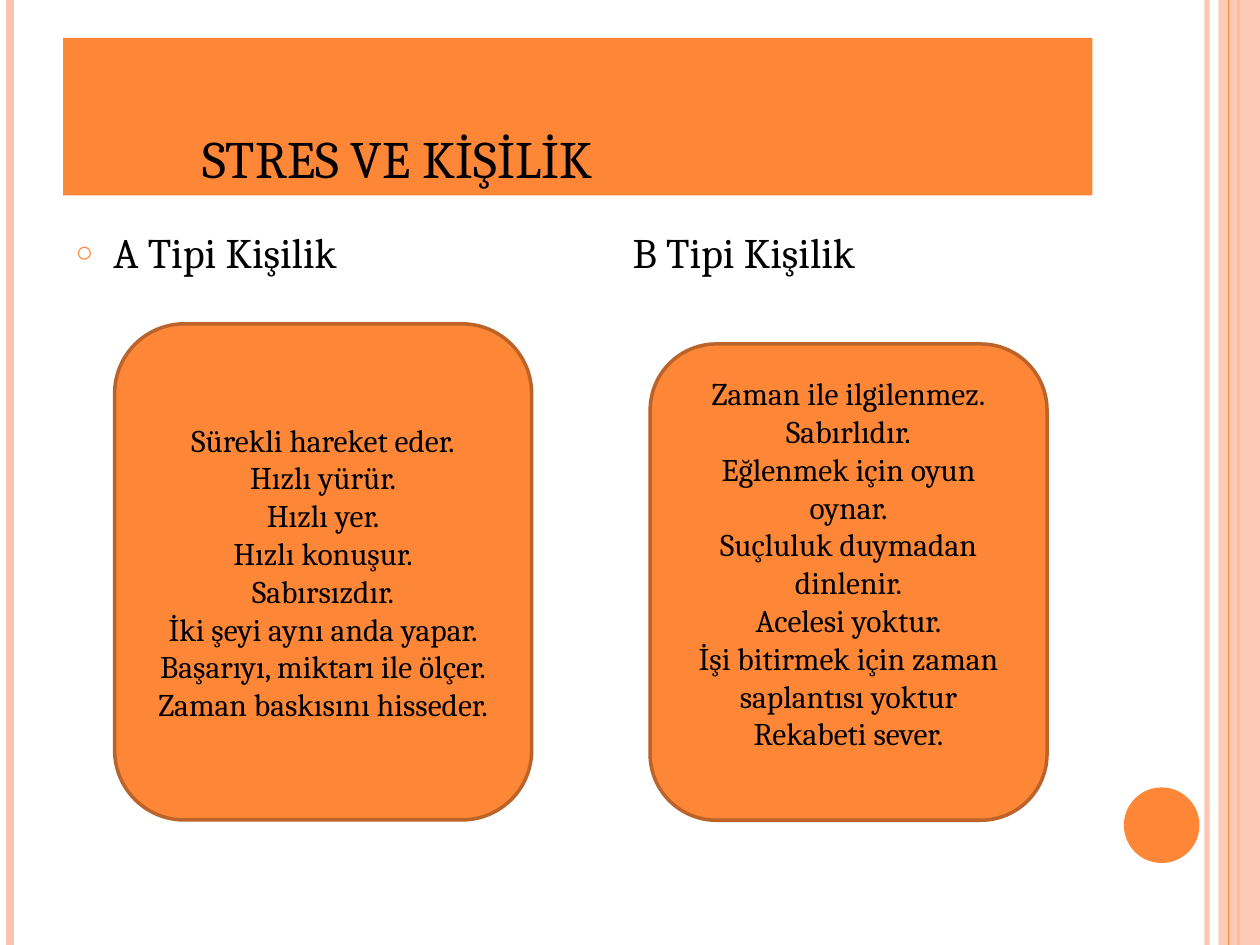
"""Build the slide on stress and personality types."""
from lxml.etree import SubElement
from pptx import Presentation
from pptx.dml.color import RGBColor
from pptx.enum.shapes import MSO_CONNECTOR as LINK, MSO_SHAPE as FORM
from pptx.enum.text import MSO_ANCHOR as ANCHOR, MSO_AUTO_SIZE as FIT, PP_ALIGN as ALIGN
from pptx.oxml.ns import qn
from pptx.util import Inches, Pt

ORANGE, PEACH, BROWN, BLACK = "FE8637", "FEC3AE", "BC6329", "000000"

deck = Presentation()
deck.slide_width, deck.slide_height = Inches(10), Inches(7.5)
slide = deck.slides.add_slide(deck.slide_layouts[3])
shapes = slide.shapes


def area(*shares):
    """Turn percent shares of the slide (left, top, width, height) into lengths."""
    sides = (deck.slide_width, deck.slide_height) * 2
    return [int(side * share / 100) for side, share in zip(sides, shares)]


def paint(fill, tone):
    """Give a fill one solid colour."""
    fill.solid()
    fill.fore_color.rgb = RGBColor.from_string(tone)


rails = [
    (95.8, 0, 3, PEACH, 93),
    (0.8, 0, 4.5, PEACH, 100),
    (98.3, 0, 1.5, ORANGE, 100),
    (96.7, 3.3, 0, PEACH, 87),
    (97.5, 0, 0.75, ORANGE, 100),
]
for left, wide, weight, tone, alpha in rails:
    x, y, w, h = area(left, 0, wide, 100)
    if wide:
        rail = shapes.add_shape(FORM.RECTANGLE, x, y, w, h)
        paint(rail.fill, tone)
        rail.line.fill.background()
        rail.shadow.inherit = False
    else:
        rail = shapes.add_connector(LINK.STRAIGHT, x, y, x, h)
        paint(rail.line.fill, tone)
        rail.line.width = Pt(weight)
        SubElement(rail._element.spPr, qn("a:effectLst"))
    if alpha < 100:
        shade = rail._element.spPr.find(".//" + qn("a:srgbClr"))
        SubElement(shade, qn("a:alpha"), val=str(alpha * 1000))

dot = shapes.add_shape(FORM.OVAL, *area(89.2, 83.33, 6, 8))
paint(dot.fill, ORANGE)
dot.line.fill.background()
dot.shadow.inherit = False

title, first, second = slide.placeholders
paint(title.fill, ORANGE)
heads = [
    (title, "STRES VE KİŞİLİK", 30, 1.11, ANCHOR.BOTTOM, (5, 4, 81.7, 16.67)),
    (first, "A Tipi Kişilik", 24, 0.1, ANCHOR.TOP, (5, 23.33, 40.9, 71)),
    (second, "B Tipi Kişilik", 24, 0.1, ANCHOR.TOP, (49.2, 23.33, 37.5, 71)),
]
for holder, words, size, inset, anchor, place in heads:
    holder.left, holder.top, holder.width, holder.height = area(*place)
    frame = holder.text_frame
    frame.text = words
    frame.auto_size = FIT.NONE
    frame.vertical_anchor = anchor
    frame.margin_left = Inches(inset)
    para = frame.paragraphs[0]
    para.alignment = ALIGN.LEFT
    para.font.size, para.font.name = Pt(size), "Cambria"
    paint(para.font.fill, BLACK)
    if holder is not title:
        para.space_before = Pt(6)
        props = para._p.get_or_add_pPr()
        indent = Inches(0.3) if holder is first else 0
        props.set("marL", str(indent))
        props.set("indent", str(-indent))
        if holder is first:
            SubElement(SubElement(props, qn("a:buClr")), qn("a:srgbClr"), val=ORANGE)
            SubElement(props, qn("a:buSzPct"), val="70000")
            SubElement(props, qn("a:buChar"), char="○")
        else:
            SubElement(props, qn("a:buNone"))
        props.append(props.find(qn("a:defRPr")))

cards = [
    ((9.1, 34.27, 33.1, 52.5), 0.05, [
        "Sürekli hareket eder.",
        "Hızlı yürür.",
        "Hızlı yer.",
        "Hızlı konuşur.",
        "Sabırsızdır.",
        "İki şeyi aynı anda yapar.",
        "Başarıyı, miktarı ile ölçer.",
        "Zaman baskısını hisseder.",
    ]),
    ((51.6, 36.4, 31.5, 50.4), 0.35, [
        "Zaman ile ilgilenmez.",
        "Sabırlıdır.",
        "Eğlenmek için oyun oynar.",
        "Suçluluk duymadan dinlenir.",
        "Acelesi yoktur.",
        "İşi bitirmek için zaman saplantısı yoktur",
        "Rekabeti sever.",
    ]),
]
for place, base, traits in cards:
    card = shapes.add_shape(FORM.ROUNDED_RECTANGLE, *area(*place))
    paint(card.fill, ORANGE)
    paint(card.line.fill, BROWN)
    card.line.width = Pt(2)
    card.shadow.inherit = False
    frame = card.text_frame
    frame.text = "\n".join(traits)
    frame.word_wrap = True
    frame.vertical_anchor = ANCHOR.MIDDLE
    frame.margin_bottom = Inches(base)
    for para in frame.paragraphs:
        para.alignment = ALIGN.CENTER
        para.font.size, para.font.name = Pt(18), "Cambria"
        paint(para.font.fill, BLACK)

deck.save("out.pptx")
